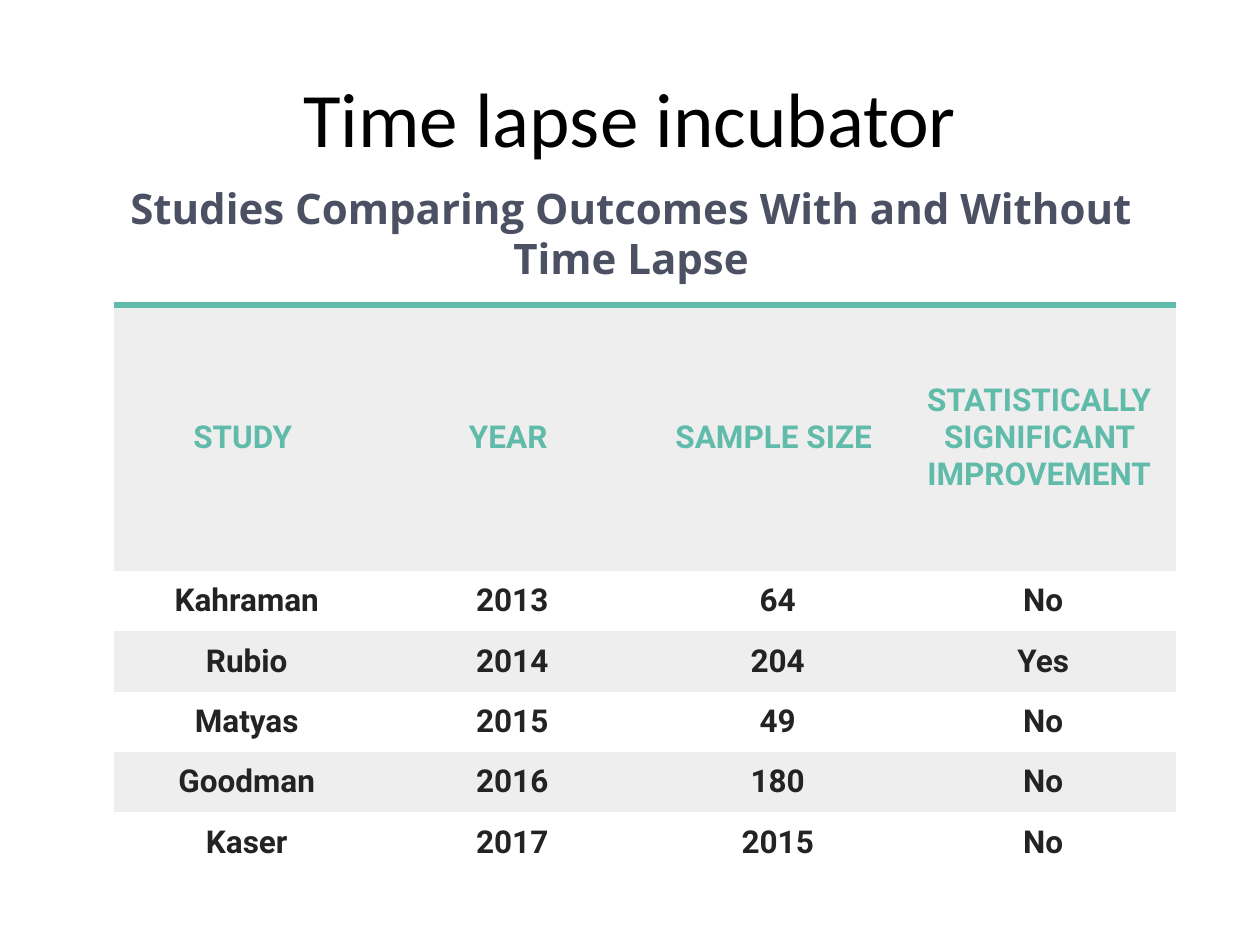
from dataclasses import dataclass

from pptx import Presentation
from pptx.dml.color import RGBColor as RGB
from pptx.enum.text import MSO_ANCHOR as Anchor, PP_ALIGN as Align
from pptx.oxml.ns import qn
from pptx.util import Emu, Pt
from lxml.etree import SubElement

PX_PER_INCH = 126


def px(n):
    return Emu(round(n * 914400 / PX_PER_INCH))


@dataclass(frozen=True)
class Theme:
    ink: str = "000000"
    subtitle: str = "4C5063"
    accent: str = "60BBAA"
    body: str = "232323"
    band: str = "EEEEEE"
    paper: str = "FFFFFF"
    title_font: str = "Calibri"
    subtitle_font: str = "Open Sans"
    table_font: str = "Roboto"
    title_size: int = 44
    subtitle_size: int = 24
    table_size: int = 18
    rule: float = 3.5


def write(tf, text, *, font, size, color, bold=False, leading=None):
    """Fill a text frame with one centred paragraph."""
    p = tf.paragraphs[0]
    p.alignment = Align.CENTER
    if leading:
        p.line_spacing = Pt(leading)
    r = p.add_run()
    r.text = text
    r.font.name, r.font.size, r.font.bold = font, Pt(size), bold
    r.font.color.rgb = RGB.from_string(color)


def set_borders(cell, top=None, width=0):
    """Clear all cell borders except an optional coloured top rule."""
    tc_pr = cell._tc.get_or_add_tcPr()
    for side in ("L", "R", "T", "B"):
        ln = SubElement(tc_pr, qn(f"a:ln{side}"))
        if side == "T" and top:
            ln.set("w", str(Pt(width)))
            fill = SubElement(ln, qn("a:solidFill"))
            SubElement(fill, qn("a:srgbClr")).set("val", top)
        else:
            SubElement(ln, qn("a:noFill"))


class SlideBuilder:
    def __init__(self, slide, theme):
        self.slide, self.theme = slide, theme

    def text(self, x, y, w, h, text, **style):
        tf = self.slide.shapes.add_textbox(*map(px, (x, y, w, h))).text_frame
        tf.word_wrap = True
        tf.vertical_anchor = Anchor.MIDDLE
        tf.margin_left = tf.margin_right = tf.margin_top = tf.margin_bottom = 0
        write(tf, text, **style)

    def table(self, x, y, w, h, header_h, rows):
        t = self.theme
        shape = self.slide.shapes.add_table(len(rows), len(rows[0]), *map(px, (x, y, w, h)))
        table = shape.table
        table.first_row = table.horz_banding = False
        body_h = (h - header_h) / (len(rows) - 1)
        for i, values in enumerate(rows):
            header = i == 0
            table.rows[i].height = px(header_h if header else body_h)
            for cell, value in zip(table.rows[i].cells, values):
                set_borders(cell, t.accent if header else None, t.rule)
                cell.fill.solid()
                cell.fill.fore_color.rgb = RGB.from_string(t.paper if i % 2 else t.band)
                cell.vertical_anchor = Anchor.MIDDLE
                cell.margin_left = px(5 if header else 9)
                cell.margin_right = px(13 if header else 9)
                cell.margin_top = cell.margin_bottom = px(9)
                write(cell.text_frame, value, font=t.table_font, size=t.table_size,
                      color=t.accent if header else t.body, bold=True)


STUDIES = [
    ("STUDY", "YEAR", "SAMPLE SIZE", "STATISTICALLY SIGNIFICANT IMPROVEMENT"),
    ("Kahraman", "2013", "64", "No"),
    ("Rubio", "2014", "204", "Yes"),
    ("Matyas", "2015", "49", "No"),
    ("Goodman", "2016", "180", "No"),
    ("Kaser", "2017", "2015", "No"),
]


def main():
    prs = Presentation()
    prs.slide_width, prs.slide_height = px(1260), px(945)
    theme = Theme()
    s = SlideBuilder(prs.slides.add_slide(prs.slide_layouts[6]), theme)
    s.text(63, 38, 1134, 158, "Time lapse incubator", font=theme.title_font,
           size=theme.title_size, color=theme.ink)
    s.table(114, 305, 1062, 568, 266, STUDIES)
    s.text(100, 183, 1062, 100, "Studies Comparing Outcomes With and Without Time Lapse",
           font=theme.subtitle_font, size=theme.subtitle_size, color=theme.subtitle,
           bold=True, leading=28.5)
    prs.save("out.pptx")


if __name__ == "__main__":
    main()
